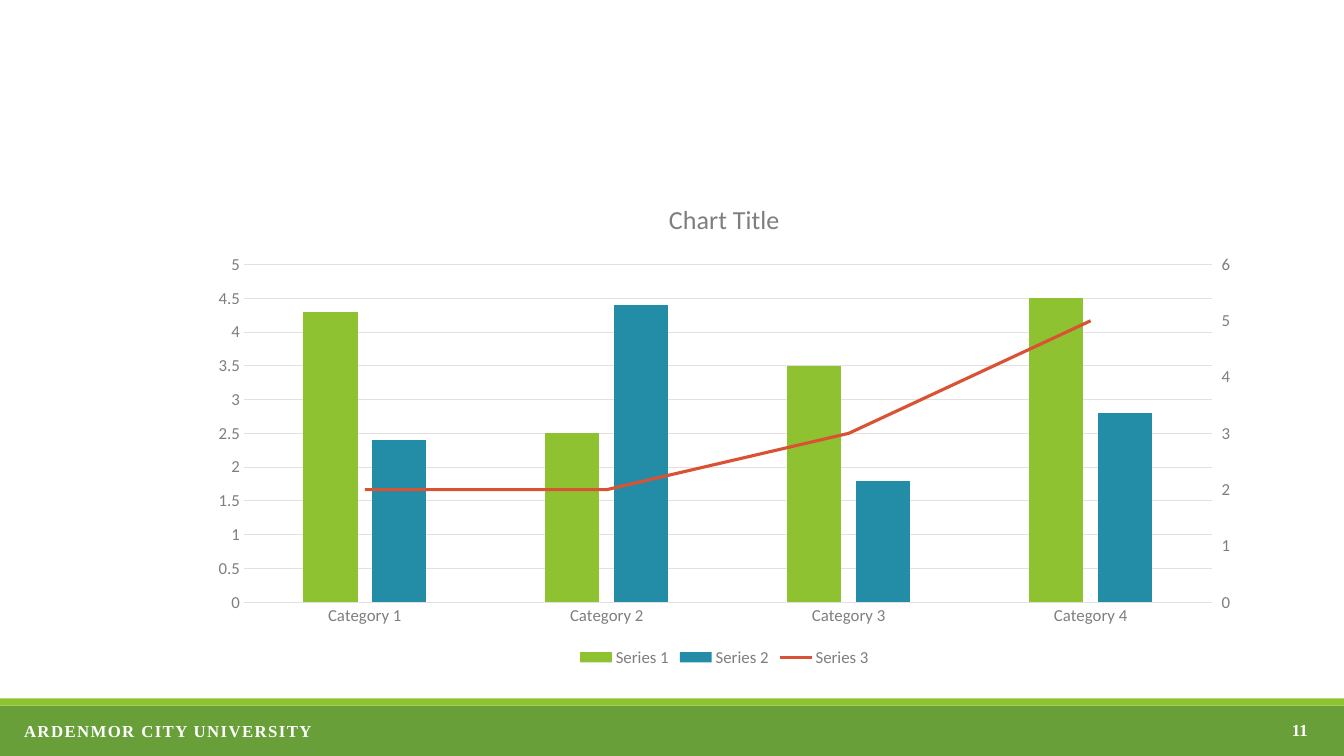
"""Build a slide with a combined column and line chart above a university footer band."""
from copy import deepcopy
from dataclasses import dataclass

from lxml import etree
from pptx import Presentation
from pptx.chart.axis import ValueAxis
from pptx.chart.data import CategoryChartData
from pptx.dml.color import RGBColor
from pptx.enum.chart import XL_CHART_TYPE, XL_LEGEND_POSITION, XL_MARKER_STYLE, XL_TICK_MARK
from pptx.enum.shapes import MSO_SHAPE
from pptx.enum.text import MSO_ANCHOR, PP_ALIGN
from pptx.oxml.ns import qn
from pptx.util import Inches, Pt

COLUMNS = XL_CHART_TYPE.COLUMN_CLUSTERED
BOTTOM = XL_LEGEND_POSITION.BOTTOM
NO_MARKER = XL_MARKER_STYLE.NONE
NO_TICK, TICK_OUT = XL_TICK_MARK.NONE, XL_TICK_MARK.OUTSIDE
RECTANGLE = MSO_SHAPE.RECTANGLE
TOP, MIDDLE = MSO_ANCHOR.TOP, MSO_ANCHOR.MIDDLE
LEFT, RIGHT = PP_ALIGN.LEFT, PP_ALIGN.RIGHT

UNIVERSITY = "ARDENMOR CITY UNIVERSITY"
PAGE = "11"
CHART_TITLE = "Chart Title"
CATEGORIES = ["Category 1", "Category 2", "Category 3", "Category 4"]
SERIES = {
    "Series 1": (4.3, 2.5, 3.5, 4.5),
    "Series 2": (2.4, 4.4, 1.8, 2.8),
    "Series 3": (2, 2, 3, 5),
}
LEFT_SCALE = (5, 0.5)
RIGHT_SCALE = (6, 1)


@dataclass(frozen=True)
class Theme:
    """Colours, fonts and sizes."""
    band: str = "689F38"
    series: tuple = ("8FC231", "238DA7", "DA5234")
    label: str = "7E7E7E"
    grid: str = "E1E1E1"
    white: str = "FFFFFF"
    chart_font: str = "Calibri"
    footer_font: str = "Times New Roman"
    text_size: float = 12
    title_size: float = 18.6
    grid_width: float = 0.75
    line_width: float = 2.25


THEME = Theme()
WIDTH, HEIGHT = 13.33, 7.5
BAND_HEIGHT, STRIPE_HEIGHT = 0.5, 0.07
BAND_TOP = HEIGHT - BAND_HEIGHT
CHART_BOX = (1.96, 1.8, 10.45, 4.86)


def box(*lengths):
    return [Inches(length) for length in lengths]


def style_font(font, name, color, size=THEME.text_size, bold=False):
    font.name, font.size, font.bold = name, Pt(size), bold
    font.color.rgb = RGBColor.from_string(color)


def style_line(line, color, width):
    line.color.rgb = RGBColor.from_string(color)
    line.width = Pt(width)


def set_scale(axis, scale):
    axis.minimum_scale = 0
    axis.maximum_scale, axis.major_unit = scale


def add_band(slide, top, height, color):
    band = slide.shapes.add_shape(RECTANGLE, *box(0, top, WIDTH, height))
    band.shadow.inherit = False
    band.fill.solid()
    band.fill.fore_color.rgb = RGBColor.from_string(color)
    band.line.fill.background()


def add_footer_text(slide, text, place, align, anchor):
    frame = slide.shapes.add_textbox(*box(*place)).text_frame
    frame.word_wrap = True
    frame.vertical_anchor = anchor
    paragraph = frame.paragraphs[0]
    paragraph.text, paragraph.alignment = text, align
    style_font(paragraph.font, THEME.footer_font, THEME.white, bold=True)
    return paragraph


def move_last_series_to_right_axis(chart):
    bars = chart.plots[0]._element
    category_axis = chart.category_axis._element
    value_axis = chart.value_axis._element
    trend = bars.findall(qn("c:ser"))[-1]
    for bar_setting in trend.findall(qn("c:invertIfNegative")):
        trend.remove(bar_setting)

    lines = bars.makeelement(qn("c:lineChart"))
    bars.addnext(lines)
    etree.SubElement(lines, qn("c:grouping")).set("val", "standard")
    etree.SubElement(lines, qn("c:varyColors")).set("val", "0")
    lines.append(trend)
    etree.SubElement(lines, qn("c:marker")).set("val", "1")

    hidden_axis, right_axis = deepcopy(category_axis), deepcopy(value_axis)
    value_axis.addnext(right_axis)
    right_axis.addnext(hidden_axis)
    for axis, own, other in ((hidden_axis, "5001", "5002"), (right_axis, "5002", "5001")):
        etree.SubElement(lines, qn("c:axId")).set("val", own)
        axis.find(qn("c:axId")).set("val", own)
        axis.find(qn("c:crossAx")).set("val", other)
    hidden_axis.find(qn("c:delete")).set("val", "1")
    right_axis.find(qn("c:axPos")).set("val", "r")
    right_axis.find(qn("c:crosses")).set("val", "max")

    right = ValueAxis(right_axis)
    right.has_major_gridlines = False
    right.major_tick_mark = TICK_OUT
    set_scale(right, RIGHT_SCALE)


def add_combined_chart(slide):
    data = CategoryChartData()
    data.categories = CATEGORIES
    for name, values in SERIES.items():
        data.add_series(name, values)
    chart = slide.shapes.add_chart(COLUMNS, *box(*CHART_BOX), data).chart
    style_font(chart.font, THEME.chart_font, THEME.label)

    chart.has_title = True
    title = chart.chart_title.text_frame.paragraphs[0]
    title.text = CHART_TITLE
    style_font(title.font, THEME.chart_font, THEME.label, THEME.title_size)
    chart.has_legend = True
    chart.legend.position = BOTTOM
    chart.legend.include_in_layout = False
    style_font(chart.legend.font, THEME.chart_font, THEME.label)

    categories, values = chart.category_axis, chart.value_axis
    for axis in (categories, values):
        axis.major_tick_mark = axis.minor_tick_mark = NO_TICK
        style_font(axis.tick_labels.font, THEME.chart_font, THEME.label)
    style_line(categories.format.line, THEME.grid, THEME.grid_width)
    values.format.line.fill.background()
    values.has_major_gridlines = True
    style_line(values.major_gridlines.format.line, THEME.grid, THEME.grid_width)
    set_scale(values, LEFT_SCALE)

    move_last_series_to_right_axis(chart)
    columns, trend_plot = chart.plots
    columns.gap_width, columns.overlap = 219, -27
    columns.vary_by_categories = False
    for series, color in zip(columns.series, THEME.series):
        series.format.fill.solid()
        series.format.fill.fore_color.rgb = RGBColor.from_string(color)
    trend = trend_plot.series[0]
    trend.smooth = False
    trend.marker.style = NO_MARKER
    style_line(trend.format.line, THEME.series[-1], THEME.line_width)


def main():
    deck = Presentation()
    deck.slide_width, deck.slide_height = box(WIDTH, HEIGHT)
    slide = deck.slides.add_slide(deck.slide_layouts[6])
    add_band(slide, BAND_TOP, BAND_HEIGHT, THEME.band)
    add_band(slide, BAND_TOP - STRIPE_HEIGHT, STRIPE_HEIGHT, THEME.series[0])
    university = add_footer_text(slide, UNIVERSITY, (0.14, BAND_TOP + 0.1, 9.8, 0.3), LEFT, TOP)
    university.runs[0].font._element.set("spc", "100")
    add_footer_text(slide, PAGE, (10.07, BAND_TOP + 0.04, 3, 0.4), RIGHT, MIDDLE)
    add_combined_chart(slide)
    deck.save("out.pptx")


if __name__ == "__main__":
    main()
